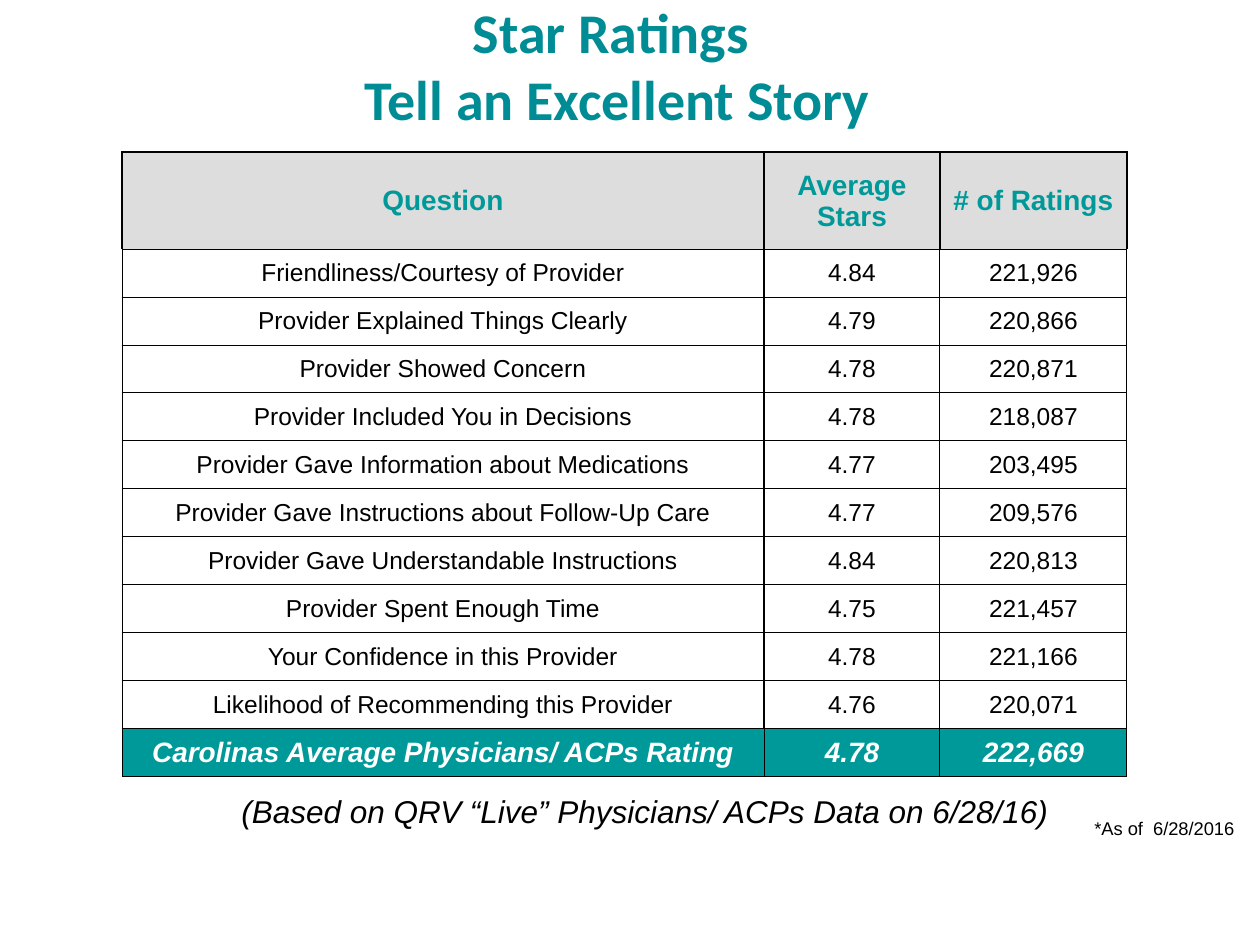
import pptx
import pptx.util
import pptx.dml.color
import pptx.enum.text
import pptx.oxml.ns
import lxml.etree

EMU_PER_PX = 914400 // 126
TEAL = "009999"
BLACK = "000000"


def px(length):
    return pptx.util.Emu(length * EMU_PER_PX)


def color(value):
    return pptx.dml.color.RGBColor.from_string(value)


presentation = pptx.Presentation()
presentation.slide_width = pptx.util.Inches(10)
presentation.slide_height = pptx.util.Inches(7.5)
slide = presentation.slides.add_slide(presentation.slide_layouts[5])
center = pptx.enum.text.PP_ALIGN.CENTER
middle = pptx.enum.text.MSO_ANCHOR.MIDDLE

# Title, raised by its bottom inset
title = slide.shapes.title
title.left, title.top, title.width, title.height = px(-25), px(48), px(1285), px(95)
frame = title.text_frame
frame.auto_size = pptx.enum.text.MSO_AUTO_SIZE.NONE
frame.vertical_anchor = middle
frame.margin_bottom = px(68)
frame.text = "Star Ratings \vTell an Excellent Story"
paragraph = frame.paragraphs[0]
paragraph.alignment = center
paragraph.font.name = "Calibri"
paragraph.font.size = pptx.util.Pt(32)
paragraph.font.bold = True
paragraph.font.color.rgb = color("008C95")

# Ratings table
rows = [
    ("Question", "Average Stars", "# of Ratings"),
    ("Friendliness/Courtesy of Provider", "4.84", "221,926"),
    ("Provider Explained Things Clearly", "4.79", "220,866"),
    ("Provider Showed Concern", "4.78", "220,871"),
    ("Provider Included You in Decisions", "4.78", "218,087"),
    ("Provider Gave Information about Medications", "4.77", "203,495"),
    ("Provider Gave Instructions about Follow-Up Care", "4.77", "209,576"),
    ("Provider Gave Understandable Instructions", "4.84", "220,813"),
    ("Provider Spent Enough Time", "4.75", "221,457"),
    ("Your Confidence in this Provider", "4.78", "221,166"),
    ("Likelihood of Recommending this Provider", "4.76", "220,071"),
    ("Carolinas Average Physicians/ ACPs Rating", "4.78", "222,669"),
]
column_widths = [642, 176, 187]
header_height, row_height = 97, 48
last = len(rows) - 1
table = slide.shapes.add_table(
    len(rows), len(column_widths), px(122), px(152),
    px(sum(column_widths)), px(header_height + row_height * last)).table
for column, width in zip(table.columns, column_widths):
    column.width = px(width)

for row_index, texts in enumerate(rows):
    is_header, is_total = row_index == 0, row_index == last
    table.rows[row_index].height = px(header_height if is_header else row_height)
    for column_index, text in enumerate(texts):
        cell = table.cell(row_index, column_index)
        cell.text = text
        cell.vertical_anchor = middle
        cell.margin_left = cell.margin_right = cell.margin_top = px(1)
        cell.margin_bottom = 0
        paragraph = cell.text_frame.paragraphs[0]
        paragraph.alignment = center
        paragraph.font.name = "Arial"
        paragraph.font.size = pptx.util.Pt(16 if is_header or is_total else 14)
        paragraph.font.bold = is_header or is_total
        paragraph.font.italic = is_total
        paragraph.font.color.rgb = color(
            TEAL if is_header else "FFFFFF" if is_total else BLACK)

        # Borders: heavier around the header and beside the question column
        heavy = {
            "L": is_header or (column_index == 1 and not is_total),
            "R": is_header or (column_index == 0 and not is_total),
            "T": is_header,
            "B": False,
        }
        properties = cell._tc.get_or_add_tcPr()
        for side, is_heavy in heavy.items():
            line = lxml.etree.SubElement(
                properties, pptx.oxml.ns.qn("a:ln" + side),
                w=str(pptx.util.Pt(1 if is_heavy else 0.5)))
            fill = lxml.etree.SubElement(line, pptx.oxml.ns.qn("a:solidFill"))
            lxml.etree.SubElement(fill, pptx.oxml.ns.qn("a:srgbClr"), val=BLACK)

        if is_header or is_total:
            cell.fill.solid()
            cell.fill.fore_color.rgb = color("DDDDDD" if is_header else TEAL)
        else:
            cell.fill.background()

# Notes under the table
notes = [
    ("*As of  6/28/2016", (1082, 811, 168, 35), 10.5, False, False),
    ("(Based on QRV “Live” Physicians/ ACPs Data on 6/28/16)",
     (229, 786, 963, 50), 18, True, True),
]
for text, box, size, italic, wrap in notes:
    shape = slide.shapes.add_textbox(*map(px, box))
    frame = shape.text_frame
    frame.word_wrap = wrap
    frame.auto_size = pptx.enum.text.MSO_AUTO_SIZE.SHAPE_TO_FIT_TEXT
    frame.text = text
    paragraph = frame.paragraphs[0]
    paragraph.font.name = "Arial"
    paragraph.font.size = pptx.util.Pt(size)
    paragraph.font.italic = italic
    paragraph.font.color.rgb = color(BLACK)

presentation.save("out.pptx")
